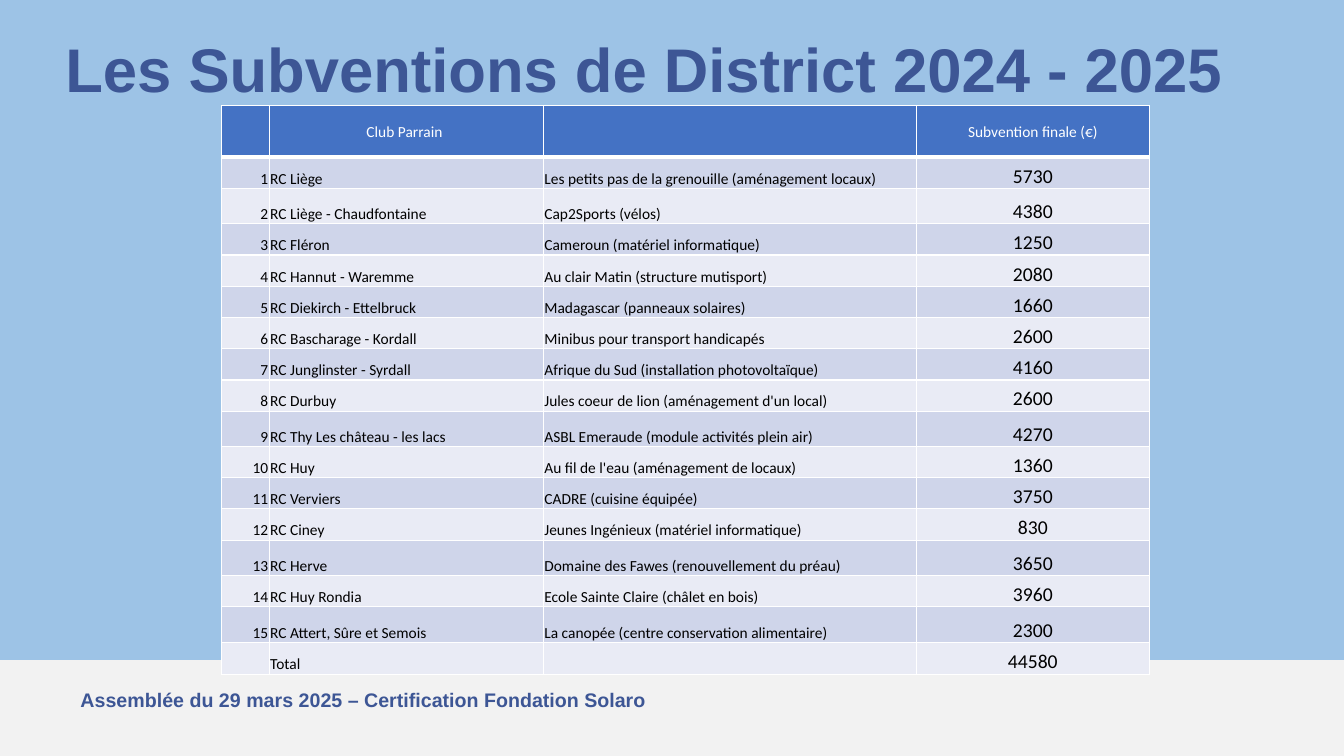
import pptx
import pptx.util
import pptx.dml.color
import pptx.enum.shapes
import pptx.enum.text
import pptx.oxml.ns
from dataclasses import dataclass
from lxml import etree
from pptx.util import Inches

ALIGN = pptx.enum.text.PP_ALIGN
ANCHOR = pptx.enum.text.MSO_ANCHOR


@dataclass(frozen=True)
class Theme:
    sky: str = "9DC3E6"
    band: str = "F2F2F2"
    navy: str = "3D5695"
    header: str = "4472C4"
    odd_row: str = "CFD5EA"
    even_row: str = "E9EBF5"
    white: str = "FFFFFF"
    black: str = "000000"
    heading_font: str = "Arial"
    table_font: str = "Calibri"
    title_size: int = 44
    amount_size: int = 14
    footer_size: int = 14
    table_size: int = 11


THEME = Theme()

GRANTS = [
    ("RC Liège", "Les petits pas de la grenouille (aménagement locaux)", 5730),
    ("RC Liège - Chaudfontaine", "Cap2Sports (vélos)", 4380),
    ("RC Fléron", "Cameroun (matériel informatique)", 1250),
    ("RC Hannut - Waremme", "Au clair Matin (structure mutisport)", 2080),
    ("RC Diekirch - Ettelbruck", "Madagascar (panneaux solaires)", 1660),
    ("RC Bascharage - Kordall", "Minibus pour transport handicapés", 2600),
    ("RC Junglinster - Syrdall", "Afrique du Sud (installation photovoltaïque)", 4160),
    ("RC Durbuy", "Jules coeur de lion (aménagement d'un local)", 2600),
    ("RC Thy Les château - les lacs", "ASBL Emeraude (module activités plein air)", 4270),
    ("RC Huy", "Au fil de l'eau (aménagement de locaux)", 1360),
    ("RC Verviers", "CADRE (cuisine équipée)", 3750),
    ("RC Ciney", "Jeunes Ingénieux (matériel informatique)", 830),
    ("RC Herve", "Domaine des Fawes (renouvellement du préau)", 3650),
    ("RC Huy Rondia", "Ecole Sainte Claire (châlet en bois)", 3960),
    ("RC Attert, Sûre et Semois", "La canopée (centre conservation alimentaire)", 2300),
]
COLUMN_WIDTHS = (0.47, 2.72, 3.7, 2.31)
COLUMN_ALIGNS = (ALIGN.RIGHT, ALIGN.LEFT, ALIGN.LEFT, ALIGN.CENTER)
ROW_HEIGHT = 0.31
TALL_ROWS = {0: 0.51, 2: 0.35, 9: 0.35, 13: 0.35, 15: 0.36}


def rgb(code):
    return pptx.dml.color.RGBColor.from_string(code)


def apply(target, formats):
    for attribute, value in formats.items():
        setattr(target, attribute, value)


def write(paragraph, text, font, size, color, bold):
    run = paragraph.add_run()
    run.text = text
    apply(run.font, {"name": font, "size": pptx.util.Pt(size), "bold": bold})
    run.font.color.rgb = rgb(color)


def add_heading(slide, box, text, size, line_spacing=1.0):
    frame = slide.shapes.add_textbox(*map(Inches, box)).text_frame
    frame.word_wrap = True
    frame.paragraphs[0].line_spacing = line_spacing
    write(frame.paragraphs[0], text, THEME.heading_font, size, THEME.navy, True)


def add_footer_band(slide):
    band = slide.shapes.add_shape(
        pptx.enum.shapes.MSO_SHAPE.RECTANGLE,
        Inches(0), Inches(6.55), Inches(13.33), Inches(0.95))
    band.shadow.inherit = False
    band.fill.solid()
    band.fill.fore_color.rgb = rgb(THEME.band)
    band.line.fill.background()


def set_borders(cell, bottom_width):
    properties = cell._tc.get_or_add_tcPr()
    for side, width in (("L", 1), ("R", 1), ("T", 1), ("B", bottom_width)):
        border = etree.SubElement(properties, pptx.oxml.ns.qn(f"a:ln{side}"),
                                  w=str(pptx.util.Pt(width)))
        fill = etree.SubElement(border, pptx.oxml.ns.qn("a:solidFill"))
        etree.SubElement(fill, pptx.oxml.ns.qn("a:srgbClr"), val=THEME.white)


def fill_cell(cell, text, align, background, is_header, size):
    apply(cell, {
        "margin_left": Inches(0.01),
        "margin_right": Inches(0.01),
        "margin_top": Inches(0.01),
        "margin_bottom": Inches(0),
        "vertical_anchor": ANCHOR.MIDDLE if is_header else ANCHOR.BOTTOM,
    })
    set_borders(cell, 3 if is_header else 1)
    cell.fill.solid()
    cell.fill.fore_color.rgb = rgb(background)
    paragraph = cell.text_frame.paragraphs[0]
    paragraph.alignment = align
    if text:
        color = THEME.white if is_header else THEME.black
        write(paragraph, text, THEME.table_font, size, color, False)
    else:
        # Keeps an empty cell from stretching its row
        etree.SubElement(paragraph._p, pptx.oxml.ns.qn("a:endParaRPr"), sz=str(size * 100))


def add_grants_table(slide):
    total = sum(amount for _, _, amount in GRANTS)
    rows = [("", "Club Parrain ", "", "Subvention finale (€)")]
    rows += [(str(number), club, project, str(amount))
             for number, (club, project, amount) in enumerate(GRANTS, 1)]
    rows.append(("", "Total", "", str(total)))

    table = slide.shapes.add_table(
        len(rows), len(COLUMN_WIDTHS),
        Inches(2.2), Inches(1.05), Inches(9.2), Inches(5.6)).table
    for column, width in zip(table.columns, COLUMN_WIDTHS):
        column.width = Inches(width)

    for row_index, texts in enumerate(rows):
        table.rows[row_index].height = Inches(TALL_ROWS.get(row_index, ROW_HEIGHT))
        is_header = row_index == 0
        stripe = THEME.odd_row if row_index % 2 else THEME.even_row
        background = THEME.header if is_header else stripe
        for column_index, text in enumerate(texts):
            is_amount = column_index == 3 and not is_header
            fill_cell(
                table.cell(row_index, column_index), text,
                ALIGN.CENTER if is_header else COLUMN_ALIGNS[column_index],
                background, is_header,
                THEME.amount_size if is_amount else THEME.table_size)


def main():
    deck = pptx.Presentation()
    apply(deck, {"slide_width": Inches(13.33), "slide_height": Inches(7.5)})
    slide = deck.slides.add_slide(deck.slide_layouts[6])

    # Background and footer
    slide.background.fill.solid()
    slide.background.fill.fore_color.rgb = rgb(THEME.sky)
    add_footer_band(slide)
    add_heading(slide, (0.7, 6.78, 6.24, 0.34),
                "Assemblée du 29 mars 2025 – Certification Fondation Solaro",
                THEME.footer_size)

    # Title and grants
    add_heading(slide, (0.55, 0.34, 12.78, 0.73),
                "Les Subventions de District 2024 - 2025", THEME.title_size, 0.9)
    add_grants_table(slide)

    deck.save("out.pptx")


if __name__ == "__main__":
    main()
